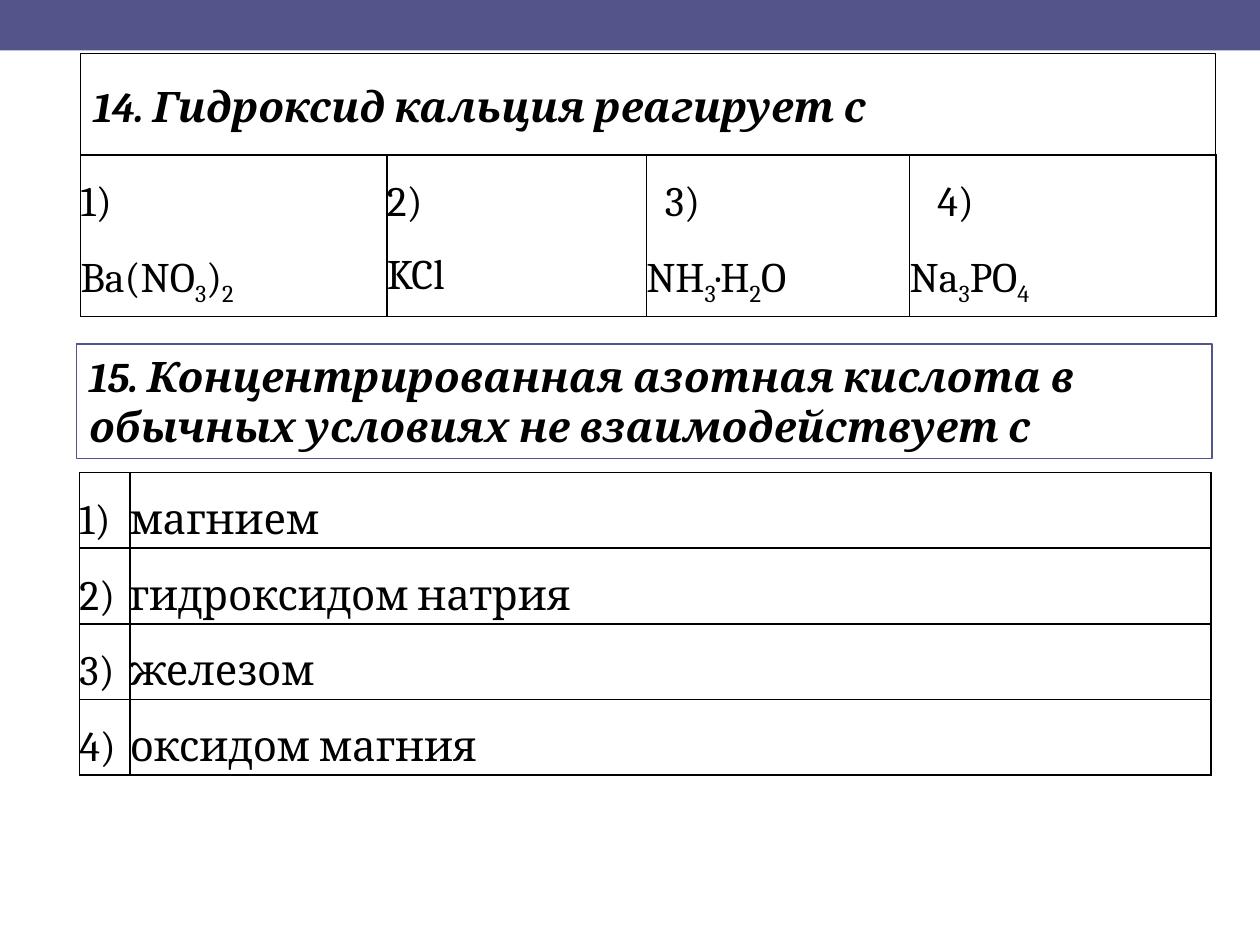
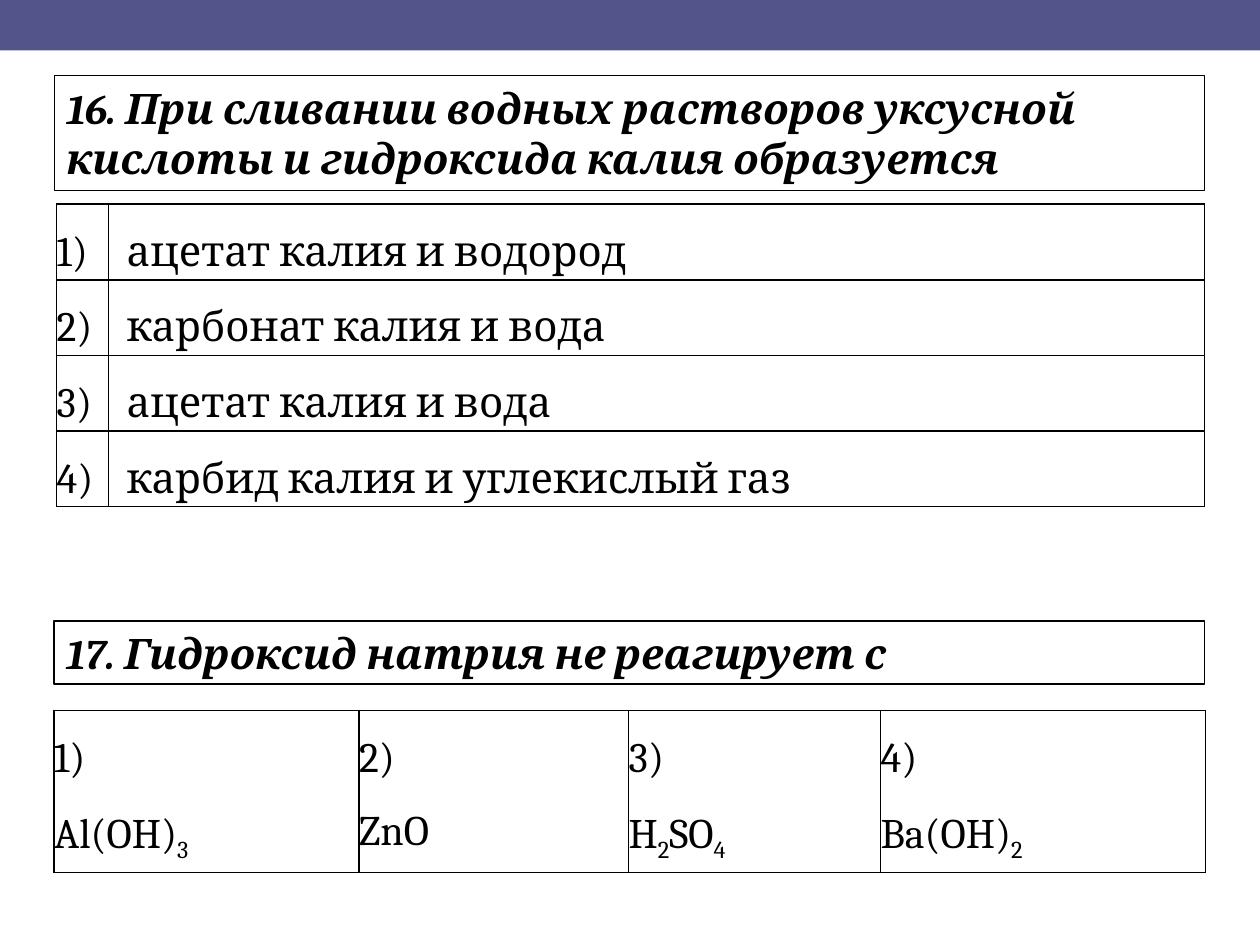
"""Build two chemistry quiz slides: framed questions with bordered answer tables."""
from itertools import groupby

from lxml import etree
from pptx import Presentation
from pptx.dml.color import RGBColor
from pptx.enum import shapes, text
from pptx.oxml.ns import qn
from pptx.util import Inches, Pt

COLORS = {"band": "53548A", "ink": "000000", "paper": "FFFFFF"}
FONT, SIZE = "Cambria", 24
ROW_H, LIST_ROW_H = 1.22, 0.575
SPACE = 0.073

SLIDES = [
    [
        {"question": "14. Гидроксид кальция реагирует с",
         "box": (0.64, 0.59, 9.01, 0.5), "anchor": "MIDDLE", "line": "ink",
         "formulas": ["Ba(NO3)2", "KCl", "NH3·H2O", "Na3PO4"],
         "at": (0.64, 1.23), "cols": [2.43, 2.06, 2.09, 2.43],
         "number_indents": [0, 0, 2, 3]},
        {"question": "15. Концентрированная азотная кислота в обычных условиях "
                     "не взаимодействует с",
         "box": (0.61, 2.73, 9.01, 0.91), "anchor": "TOP", "line": "band",
         "answers": ["магнием", "гидроксидом натрия", "железом", "оксидом магния"],
         "at": (0.63, 3.75), "cols": [0.4, 8.58], "answer_indent": 0},
    ],
    [
        {"question": "16. При сливании водных растворов уксусной кислоты и "
                     "гидроксида калия образуется",
         "box": (0.43, 0.6, 9.13, 0.91), "anchor": "MIDDLE", "line": "ink",
         "answers": ["ацетат калия и водород", "карбонат калия и вода",
                     "ацетат калия и вода", "карбид калия и углекислый газ"],
         "at": (0.45, 1.62), "cols": [0.41, 8.7], "answer_indent": 2},
        {"question": "17. Гидроксид натрия не реагирует с",
         "box": (0.43, 4.93, 9.13, 0.5), "anchor": "MIDDLE", "line": "ink",
         "formulas": ["Al(OH)3", "ZnO", "H2SO4", "Ba(OH)2"],
         "at": (0.43, 5.64), "cols": [2.42, 2.14, 2, 2.58],
         "number_indents": [0, 0, 0, 0]},
    ],
]


def rgb(name):
    return RGBColor.from_string(COLORS[name])


def write(p, content, bold=False, italic=False, spacing=1.0, indent=0, formula=False):
    p.alignment = text.PP_ALIGN.LEFT
    p.line_spacing = spacing
    if indent:
        p._p.get_or_add_pPr().set("marL", str(Inches(indent * SPACE)))
    parts = groupby(content, str.isdigit) if formula else [(False, content)]
    for low, chars in parts:
        r = p.add_run()
        r.text = "".join(chars)
        r.font.name, r.font.size = FONT, Pt(SIZE)
        r.font.bold, r.font.italic = bold, italic
        r.font.color.rgb = rgb("ink")
        if low:
            r._r.get_or_add_rPr().set("baseline", "-25000")


def add_band(prs, s):
    band = s.shapes.add_shape(shapes.MSO_SHAPE.RECTANGLE, 0, 0, prs.slide_width, Inches(0.4))
    band.shadow.inherit = False
    band.fill.solid()
    band.fill.fore_color.rgb = rgb("band")
    band.line.fill.background()
    prs.slide_master.shapes.element.insert(2, band.element)


def add_question(s, q, is_title):
    box = [Inches(v) for v in q["box"]]
    if is_title:
        sp = s.shapes.title
        sp.left, sp.top, sp.width, sp.height = box
    else:
        sp = s.shapes.add_textbox(*box)
    sp.line.color.rgb = rgb(q["line"])
    sp.line.width = Pt(0.75)
    tf = sp.text_frame
    tf.word_wrap = True
    tf.auto_size = text.MSO_AUTO_SIZE.SHAPE_TO_FIT_TEXT
    tf.vertical_anchor = text.MSO_ANCHOR[q["anchor"]]
    write(tf.paragraphs[0], q["question"], bold=True, italic=True)


def format_cell(cell):
    cell.margin_left = cell.margin_right = cell.margin_top = cell.margin_bottom = 0
    cell.fill.solid()
    cell.fill.fore_color.rgb = rgb("paper")
    tcPr = cell._tc.get_or_add_tcPr()
    for i, side in enumerate(("a:lnL", "a:lnR", "a:lnT", "a:lnB")):
        ln = etree.Element(qn(side), w=str(Pt(1)))
        fill = etree.SubElement(ln, qn("a:solidFill"))
        etree.SubElement(fill, qn("a:srgbClr"), val=COLORS["ink"])
        tcPr.insert(i, ln)


def add_table(s, q, rows, row_h):
    left, top = q["at"]
    table = s.shapes.add_table(rows, len(q["cols"]), Inches(left), Inches(top),
                               Inches(sum(q["cols"])), Inches(rows * row_h)).table
    table.first_row = table.horz_banding = False
    for col, width in zip(table.columns, q["cols"]):
        col.width = Inches(width)
    for row in table.rows:
        row.height = Inches(row_h)
    for cell in table.iter_cells():
        format_cell(cell)
    return table


def add_formulas(s, q):
    table = add_table(s, q, 1, ROW_H)
    for i, (formula, indent) in enumerate(zip(q["formulas"], q["number_indents"])):
        tf = table.cell(0, i).text_frame
        write(tf.paragraphs[0], f"{i + 1})", spacing=1.5, indent=indent)
        write(tf.add_paragraph(), formula, spacing=1.5, formula=True)


def add_answers(s, q):
    table = add_table(s, q, len(q["answers"]), LIST_ROW_H)
    for i, answer in enumerate(q["answers"]):
        number, words = (table.cell(i, c).text_frame.paragraphs[0] for c in (0, 1))
        write(number, f"{i + 1})", spacing=1.5)
        write(words, answer, spacing=1.5, indent=q["answer_indent"])


def main():
    prs = Presentation()
    prs.slide_width, prs.slide_height = Inches(10), Inches(7.5)
    for n, questions in enumerate(SLIDES):
        s = prs.slides.add_slide(prs.slide_layouts[5])
        if n == 0:
            add_band(prs, s)
        for i, q in enumerate(questions):
            add_question(s, q, is_title=i == 0)
            if "formulas" in q:
                add_formulas(s, q)
            else:
                add_answers(s, q)
    prs.save("out.pptx")


if __name__ == "__main__":
    main()
